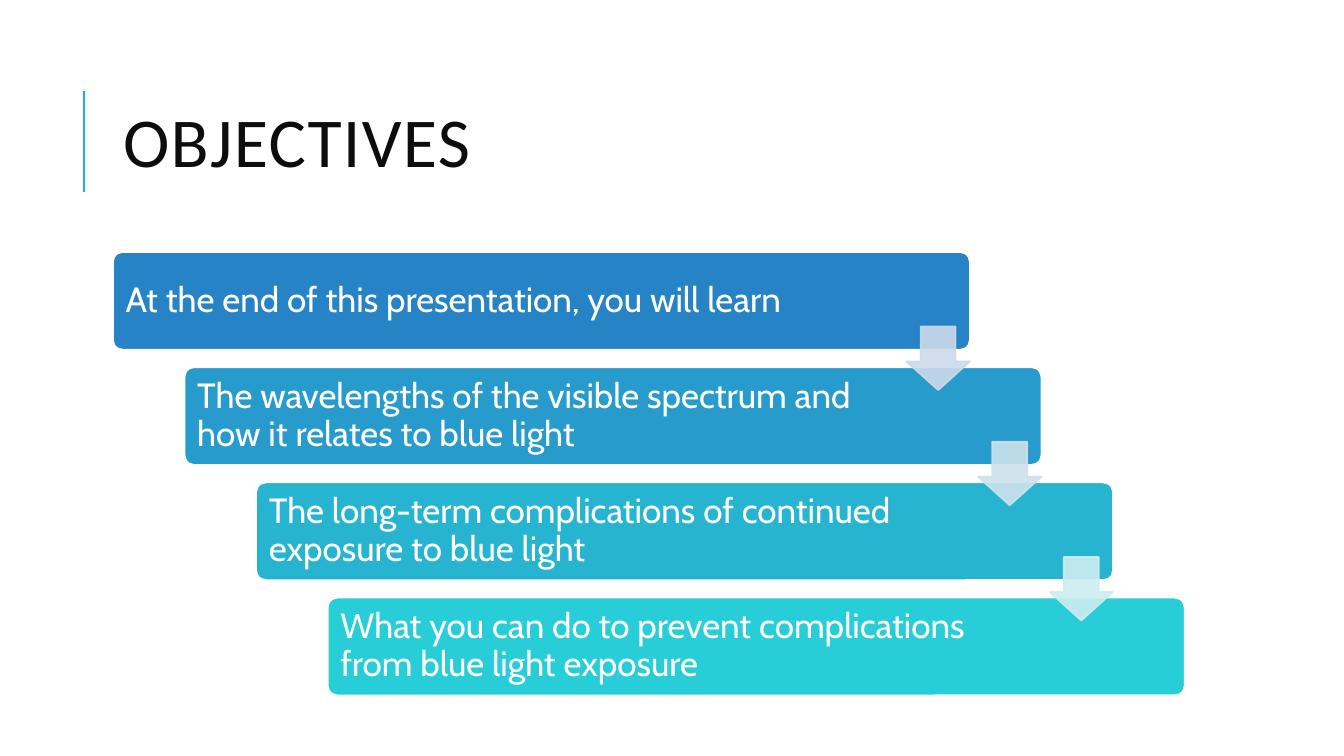
from pptx import Presentation
from pptx.dml.color import RGBColor
from pptx.enum.shapes import MSO_CONNECTOR, MSO_SHAPE
from pptx.enum.text import MSO_ANCHOR, PP_ALIGN
from pptx.oxml.ns import qn
from pptx.util import Inches, Pt
from lxml.etree import SubElement

WHITE = RGBColor(0xFF, 0xFF, 0xFF)
INK = RGBColor(0x0D, 0x0D, 0x0D)
ACCENT = RGBColor(0x1C, 0xAD, 0xE4)
STEPS = [
    ("At the end of this presentation, you will learn",
     RGBColor(0x26, 0x83, 0xC6)),
    ("The wavelengths of the visible spectrum and how it relates to blue light",
     RGBColor(0x26, 0x9B, 0xCC)),
    ("The long-term complications of continued exposure to blue light",
     RGBColor(0x27, 0xB4, 0xD1)),
    ("What you can do to prevent complications from blue light exposure",
     RGBColor(0x27, 0xCE, 0xD7)),
]
ARROWS = [
    RGBColor(0xCD, 0xD9, 0xEA),
    RGBColor(0xCD, 0xE2, 0xED),
    RGBColor(0xCD, 0xED, 0xF0),
]
LEFT, TOP = 1.12, 2.5
RIGHT, DOWN = 0.71, 1.143


class Deck:
    head_font = "Calibri"
    body_font = "Cabin"

    def __init__(self):
        self.prs = Presentation()
        self.prs.slide_width = Inches(13.33)
        self.prs.slide_height = Inches(7.5)
        self.slide = self.prs.slides.add_slide(self.prs.slide_layouts[5])

    def title(self, text, x, y, w, h):
        title = self.slide.shapes.title
        title.left, title.top = Inches(x), Inches(y)
        title.width, title.height = Inches(w), Inches(h)
        frame = title.text_frame
        frame.text = text
        frame.vertical_anchor = MSO_ANCHOR.MIDDLE
        para = frame.paragraphs[0]
        para.alignment = PP_ALIGN.LEFT
        para.line_spacing = 0.8
        self.font(para, self.head_font, 50, INK)
        para.runs[0].font._element.set("spc", "100")

    def font(self, para, name, size, color):
        para.font.name = name
        para.font.size = Pt(size)
        para.font.color.rgb = color

    def rule(self, x, top, end):
        line = self.slide.shapes.add_connector(
            MSO_CONNECTOR.STRAIGHT, Inches(x), Inches(end), Inches(x), Inches(top))
        line.line.color.rgb = ACCENT
        line.line.width = Pt(1.5)
        SubElement(line._element.spPr, qn("a:effectLst"))

    def shape(self, kind, x, y, w, h, fill, edge):
        shape = self.slide.shapes.add_shape(
            kind, Inches(x), Inches(y), Inches(w), Inches(h))
        shape.shadow.inherit = False
        shape.fill.solid()
        shape.fill.fore_color.rgb = fill
        shape.line.color.rgb = edge
        shape.line.width = Pt(1.25)
        return shape

    def step(self, text, x, y, fill):
        box = self.shape(MSO_SHAPE.ROUNDED_RECTANGLE, x, y, 8.5, 0.97, fill, WHITE)
        box.adjustments[0] = 0.1
        frame = box.text_frame
        frame.text = text
        frame.word_wrap = True
        frame.vertical_anchor = MSO_ANCHOR.MIDDLE
        frame.margin_left = frame.margin_top = frame.margin_bottom = Inches(0.1)
        frame.margin_right = Inches(1.43)
        para = frame.paragraphs[0]
        para.alignment = PP_ALIGN.LEFT
        para.line_spacing = 0.9
        self.font(para, self.body_font, 25, WHITE)

    def arrow(self, x, y, color):
        arrow = self.shape(MSO_SHAPE.DOWN_ARROW, x, y, 0.63, 0.63, color, color)
        arrow.adjustments[0] = 0.55
        arrow.adjustments[1] = 0.45
        for tint in arrow._element.spPr.iter(qn("a:srgbClr")):
            SubElement(tint, qn("a:alpha")).set("val", "90000")


def main():
    deck = Deck()
    deck.rule(0.83, 0.9, 1.9)
    deck.title("OBJECTIVES", 1.12, 0.64, 10.63, 1.64)
    for i, (text, fill) in enumerate(STEPS):
        deck.step(text, LEFT + i * RIGHT, TOP + i * DOWN, fill)
    for i, color in enumerate(ARROWS):
        deck.arrow(LEFT + 7.87 + i * RIGHT, TOP + 0.74 + i * DOWN, color)
    deck.prs.save("out.pptx")


if __name__ == "__main__":
    main()
